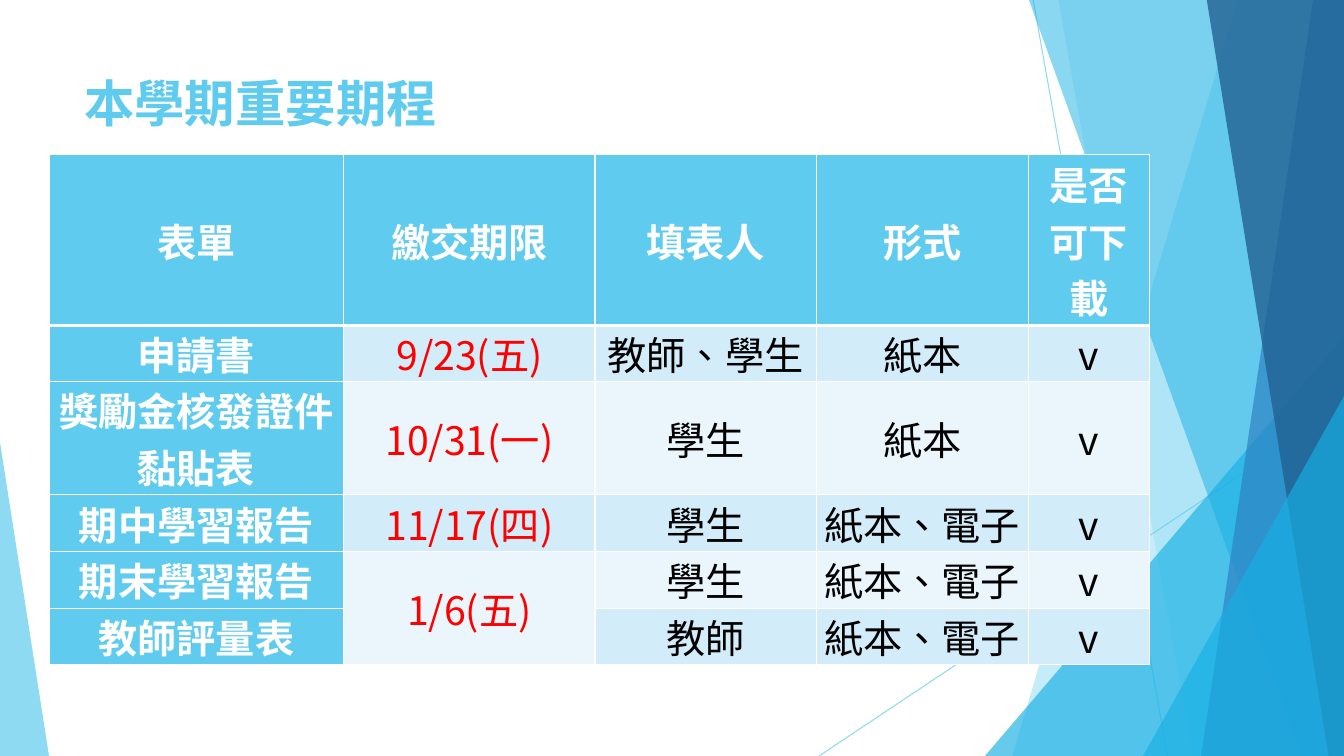
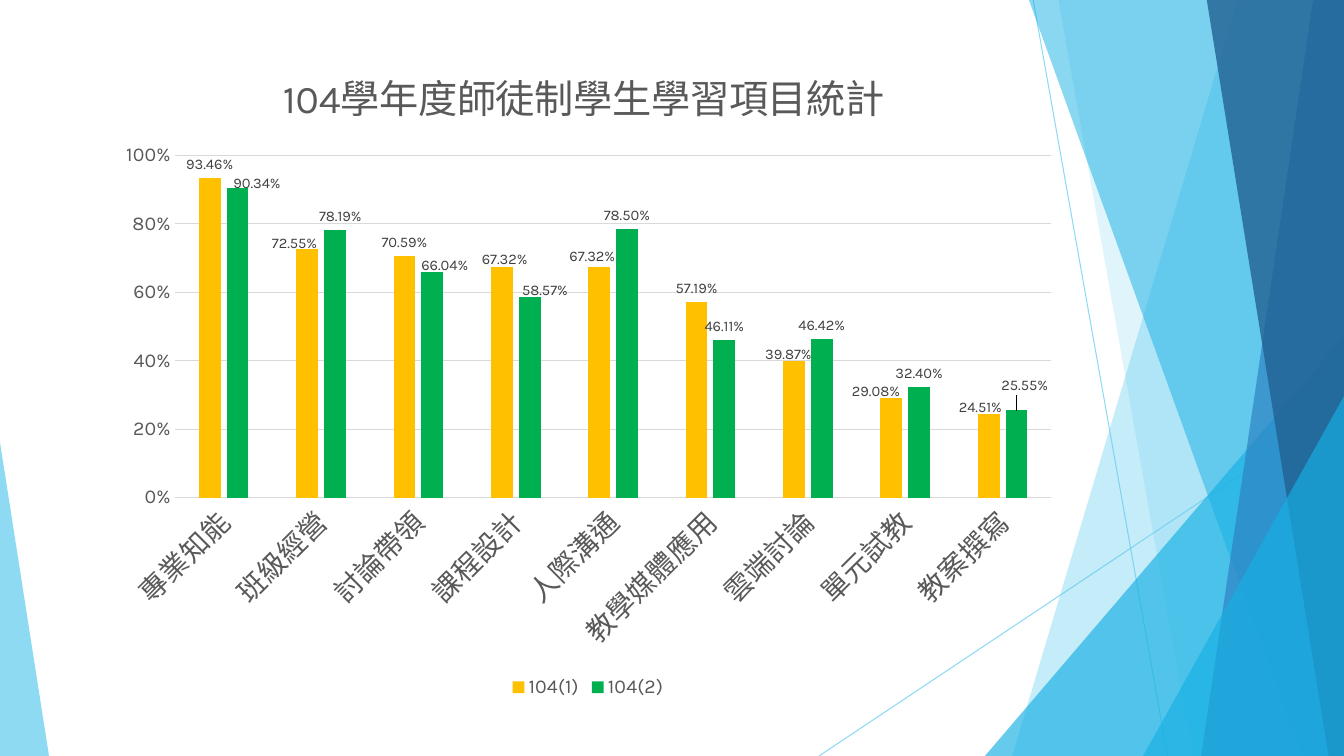
from lxml.etree import SubElement
from pptx import Presentation
from pptx.chart.data import CategoryChartData
from pptx.dml.color import RGBColor
from pptx.enum.chart import (XL_CHART_TYPE, XL_LABEL_POSITION as LabelPos,
                             XL_LEGEND_POSITION, XL_TICK_MARK)
from pptx.enum.shapes import MSO_CONNECTOR, MSO_SHAPE
from pptx.enum.text import MSO_ANCHOR, PP_ALIGN
from pptx.oxml import parse_xml
from pptx.oxml.ns import nsdecls, qn
from pptx.util import Pt

WIDTH, HEIGHT = 960, 540
LATIN, CJK = "Karla", "Noto Sans CJK SC"
COLORS = {
    "sky": "5FCBEF", "cyan": "17B0E4", "blue": "2E83C3", "navy": "226292",
    "white": "FFFFFF", "black": "000000", "red": "FF0000",
    "band_dark": "D2ECF9", "band_light": "EAF6FC",
    "grid": "D9D9D9", "axis_text": "595959", "label_text": "404040",
    "amber": "FFC000", "green": "00B050",
}

# x1, y1, x2, y2
HAIRLINES = [(738, 0, 834, HEIGHT), (WIDTH, 290, 585, HEIGHT)]
# Facets reach the right edge: (top left x, bottom left x, colour, opacity %);
# triangles: (left, top, width, apex, colour, opacity %), down to the bottom edge
FACETS = [
    (884, 723, "sky", 36),
    (756, 852, "sky", 20),
    (703.5, 240, 256.5, 1, "cyan", 66),
    (735, 930, "cyan", 50),
    (938, 858, "blue", 70),
    (861.5, 949, "navy", 80),
    (816.5, 283, 143.5, 1, "cyan", 66),
    (0, 316, 35, 0, "sky", 70),
]

SCHEDULE = [
    ["表單", "繳交期限", "填表人", "形式", "是否可下載"],
    ["申請書", "9/23(五)", "教師、學生", "紙本", "v"],
    ["獎勵金核發證件黏貼表", "10/31(一)", "學生", "紙本", "v"],
    ["期中學習報告", "11/17(四)", "學生", "紙本、電子", "v"],
    ["期末學習報告", "1/6(五)", "學生", "紙本、電子", "v"],
    ["教師評量表", "", "教師", "紙本、電子", "v"],
]
COL_WIDTHS = [210.5, 179.5, 158, 151.5, 86.5]
ROW_HEIGHTS = [122, 40, 81, 40.5, 40.5, 40.5]

TOPICS = ["專業知能", "班級經營", "討論帶領", "課程設計", "人際溝通",
          "教學媒體應用", "雲端討論", "單元試教", "教案撰寫"]
# name, colour, percentages, label shifts in points by category index
SERIES = [
    ("104(1)", "amber",
     [93.46, 72.55, 70.59, 67.32, 67.32, 57.19, 39.87, 29.08, 24.51],
     {1: (-9, 5), 3: (2, 4), 4: (-5, 2), 6: (-4, 5), 7: (-11, 5), 8: (-6, 5)}),
    ("104(2)", "green",
     [90.34, 78.19, 66.04, 58.57, 78.5, 46.11, 46.42, 32.4, 25.55],
     {0: (14, 6), 1: (4, 0), 2: (9, 5), 3: (11, 5), 8: (6, -8)}),
]


def rgb(name):
    return RGBColor.from_string(COLORS[name])


def style_font(font, size, color, bold=False, latin=LATIN):
    font.size, font.bold, font.name = Pt(size), bold, latin
    font.color.rgb = rgb(color)
    font._element.set("lang", "zh-TW")
    SubElement(font._element, qn("a:ea")).set("typeface", CJK)


def set_opacity(sp, percent):
    for clr in list(sp._element.spPr.iter(qn("a:srgbClr"))):
        SubElement(clr, qn("a:alpha")).set("val", str(percent * 1000))


def add_hairline(slide, x1, y1, x2, y2):
    line = slide.shapes.add_connector(
        MSO_CONNECTOR.STRAIGHT, Pt(x1), Pt(y1), Pt(x2), Pt(y2))
    line.line.color.rgb, line.line.width = rgb("sky"), Pt(0.75)
    set_opacity(line, 70)
    SubElement(line._element.spPr, qn("a:effectLst"))


def add_facet(slide, *geometry, color, opacity):
    if len(geometry) == 2:
        top_x, bottom_x = geometry
        builder = slide.shapes.build_freeform(top_x, 0, scale=Pt(1))
        builder.add_line_segments(
            [(WIDTH, 0), (WIDTH, HEIGHT), (bottom_x, HEIGHT)], close=True)
        sp = builder.convert_to_shape()
    else:
        left, top, width, apex = geometry
        sp = slide.shapes.add_shape(MSO_SHAPE.ISOSCELES_TRIANGLE, Pt(left),
                                    Pt(top), Pt(width), Pt(HEIGHT - top))
        sp.adjustments[0] = apex
    sp.shadow.inherit = False
    sp.fill.solid()
    sp.fill.fore_color.rgb = rgb(color)
    sp.line.fill.background()
    set_opacity(sp, opacity)


def add_base_slide(prs):
    """Add a blank slide with the faceted backdrop."""
    slide = prs.slides.add_slide(prs.slide_layouts[6])
    for ends in HAIRLINES:
        add_hairline(slide, *ends)
    for *geometry, color, opacity in FACETS:
        add_facet(slide, *geometry, color=color, opacity=opacity)
    return slide


def add_title(slide, text, left, top, width, height):
    tf = slide.shapes.add_textbox(Pt(left), Pt(top), Pt(width), Pt(height)).text_frame
    tf.word_wrap = True
    p = tf.paragraphs[0]
    p.text = text
    style_font(p.font, 36, "sky", bold=True)


def set_borders(cell, top=1, bottom=1):
    tc_pr = cell._tc.get_or_add_tcPr()
    for side, width in zip("LRTB", (1, 1, top, bottom)):
        tc_pr.append(parse_xml(
            f'<a:ln{side} {nsdecls("a")} w="{Pt(width)}"><a:solidFill>'
            f'<a:srgbClr val="{COLORS["white"]}"/></a:solidFill></a:ln{side}>'))


def style_cell(cell, row, col):
    heading = row == 0 or col == 0
    set_borders(cell, top=3 if row == 1 else 1, bottom=3 if row == 0 else 1)
    cell.fill.solid()
    band = "band_dark" if row % 2 else "band_light"
    cell.fill.fore_color.rgb = rgb("sky" if heading else band)
    cell.vertical_anchor = MSO_ANCHOR.MIDDLE
    cell.margin_left = cell.margin_right = Pt(5)
    cell.margin_top = cell.margin_bottom = 0
    p = cell.text_frame.paragraphs[0]
    p.alignment = PP_ALIGN.CENTER
    color = "white" if heading else "red" if col == 1 else "black"
    style_font(p.font, 28, color, bold=heading, latin=CJK)
    for r in p.runs:
        r.font._element.set("lang", "zh-TW")


def add_schedule(slide, left, top):
    table = slide.shapes.add_table(
        len(SCHEDULE), len(COL_WIDTHS), Pt(left), Pt(top),
        Pt(sum(COL_WIDTHS)), Pt(sum(ROW_HEIGHTS))).table
    table.first_row = table.horz_banding = False
    for column, width in zip(table.columns, COL_WIDTHS):
        column.width = Pt(width)
    for r, (texts, height) in enumerate(zip(SCHEDULE, ROW_HEIGHTS)):
        table.rows[r].height = Pt(height)
        for c, text in enumerate(texts):
            cell = table.cell(r, c)
            cell.text = text
            style_cell(cell, r, c)
    table.cell(4, 1).merge(table.cell(5, 1))


def manual_layout(x, y, w=None, h=None, target="", edge=False):
    """Build a c:layout from fractions of the chart: a place if edge, else a shift."""
    modes = '<c:xMode val="edge"/><c:yMode val="edge"/>' if edge else ""
    if target:
        modes = f'<c:layoutTarget val="{target}"/>{modes}'
    values = "".join(f'<c:{tag} val="{round(v, 4)}"/>'
                     for tag, v in zip("xywh", (x, y, w, h)) if v is not None)
    return parse_xml(f'<c:layout {nsdecls("c")}><c:manualLayout>{modes}{values}'
                     '</c:manualLayout></c:layout>')


def remove_layout(element):
    for old in element.findall(qn("c:layout")):
        element.remove(old)


def style_axes(chart):
    cat, val = chart.category_axis, chart.value_axis
    for axis, size in ((cat, 20), (val, 14)):
        axis.major_tick_mark = axis.minor_tick_mark = XL_TICK_MARK.NONE
        style_font(axis.tick_labels.font, size, "axis_text")
    cat._element.txPr.bodyPr.set("rot", "-2700000")
    val.minimum_scale, val.maximum_scale, val.major_unit = 0, 1, 0.2
    val.tick_labels.number_format = "0%"
    val.tick_labels.number_format_is_linked = False
    val.format.line.fill.background()
    for line in (cat.format.line, val.major_gridlines.format.line):
        line.color.rgb, line.width = rgb("grid"), Pt(0.75)


def hide_leader_lines(labels):
    labels._element.append(parse_xml(
        f'<c:extLst {nsdecls("c")}>'
        '<c:ext uri="{CE6537A1-D6FC-4f65-9D91-7224C49458BB}" '
        'xmlns:c15="http://schemas.microsoft.com/office/drawing/2012/chart">'
        '<c15:showLeaderLines val="0"/></c:ext></c:extLst>'))


def style_series(series, color, shifts, width, height):
    series.format.fill.solid()
    series.format.fill.fore_color.rgb = rgb(color)
    labels = series.data_labels
    labels.show_value = True
    labels.number_format, labels.number_format_is_linked = "0.00%", False
    labels.position = LabelPos.OUTSIDE_END
    style_font(labels.font, 10.5, "label_text")
    for i, (dx, dy) in shifts.items():
        label = series.points[i].data_label
        style_font(label.font, 10.5, "label_text")
        label.position = LabelPos.OUTSIDE_END
        label._dLbl.find(qn("c:idx")).addnext(
            manual_layout(dx / width, dy / height))
    hide_leader_lines(labels)


def add_topic_chart(slide, title, left, top, width, height):
    data = CategoryChartData(number_format="0.00%")
    data.categories = TOPICS
    for name, _, percents, _ in SERIES:
        data.add_series(name, [round(v / 100, 4) for v in percents])
    chart = slide.shapes.add_chart(
        XL_CHART_TYPE.COLUMN_CLUSTERED, Pt(left), Pt(top), Pt(width),
        Pt(height), data).chart
    style_font(chart.font, 10, "black")

    p = chart.chart_title.text_frame.paragraphs[0]
    p.text = title
    style_font(p.font, 28, "axis_text")
    chart.chart_title.include_in_layout = False
    title_el = chart.chart_title._element
    remove_layout(title_el)
    title_el.find(qn("c:tx")).addnext(
        manual_layout(121 / width, 8.5 / height, edge=True))

    plot_area = chart._chartSpace.chart.plotArea
    remove_layout(plot_area)
    plot_area.insert(0, manual_layout(49 / width, 79 / height, 626 / width,
                                      244.5 / height, target="inner", edge=True))

    chart.has_legend = True
    chart.legend.position = XL_LEGEND_POSITION.BOTTOM
    chart.legend.include_in_layout = False
    style_font(chart.legend.font, 14, "axis_text")

    style_axes(chart)
    plot = chart.plots[0]
    plot.gap_width, plot.overlap, plot.vary_by_categories = 219, -27, False
    for series, (_, color, _, shifts) in zip(plot.series, SERIES):
        style_series(series, color, shifts, width, height)


def main():
    prs = Presentation()
    prs.slide_width, prs.slide_height = Pt(WIDTH), Pt(HEIGHT)

    slide = add_base_slide(prs)
    add_title(slide, "本學期重要期程", 53, 48, 677, 104)
    add_schedule(slide, 35, 110.5)

    slide = add_base_slide(prs)
    add_topic_chart(slide, "104學年度師徒制學生學習項目統計", 76, 32, 688, 470)

    prs.save("out.pptx")


if __name__ == "__main__":
    main()
